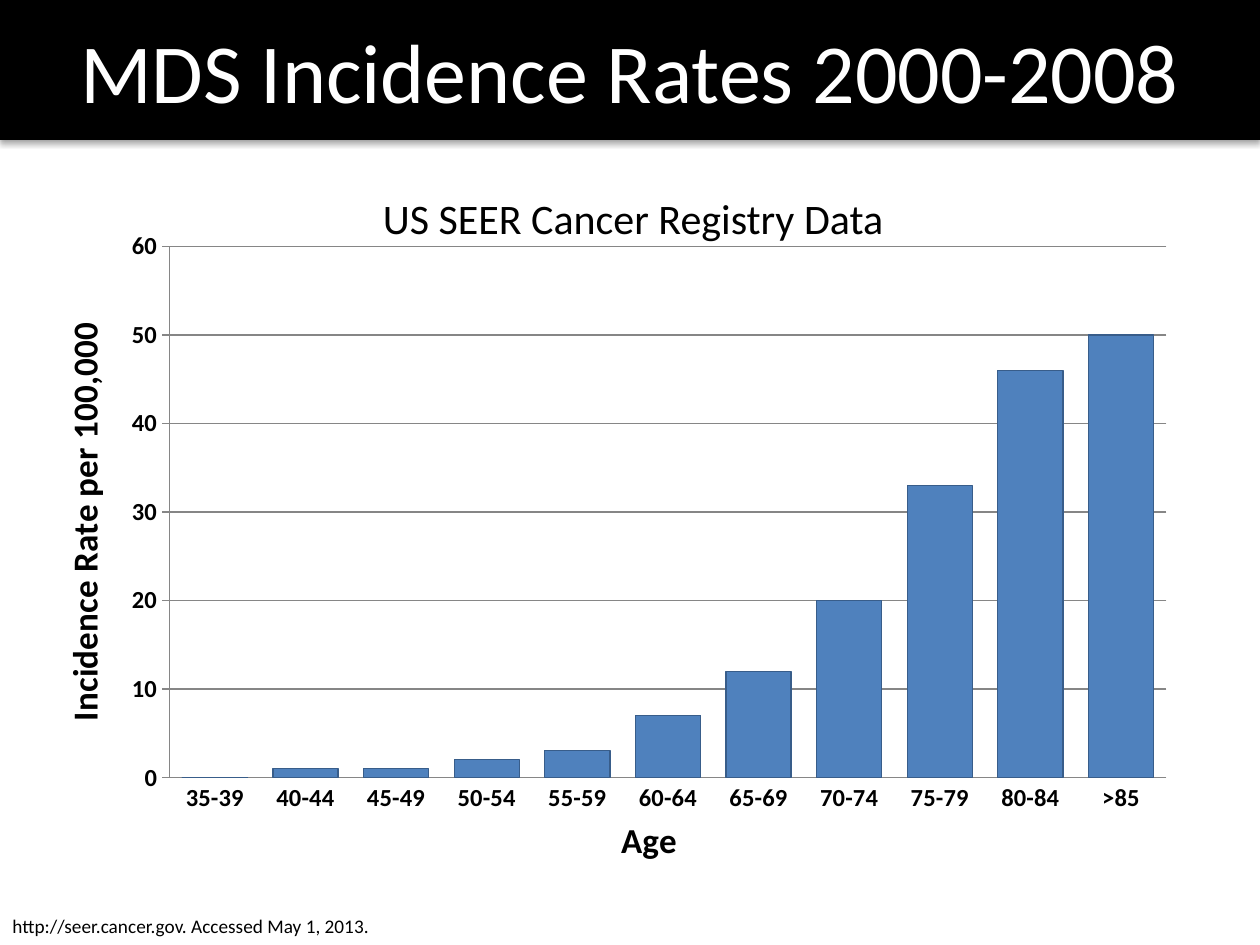
from lxml import etree
from pptx import Presentation
from pptx.chart.data import CategoryChartData
from pptx.dml.color import RGBColor
from pptx.enum.chart import XL_CHART_TYPE as CT, XL_TICK_MARK as TICK
from pptx.enum.shapes import MSO_SHAPE as SHAPE
from pptx.enum.text import MSO_ANCHOR as ANCHOR, MSO_AUTO_SIZE as FIT, PP_ALIGN as ALIGN
from pptx.oxml import parse_xml
from pptx.oxml.ns import qn
from pptx.util import Inches, Pt

BLACK = RGBColor(0, 0, 0)
WHITE = RGBColor(255, 255, 255)
BLUE = RGBColor(0x4F, 0x81, 0xBD)
NAVY = RGBColor(0x38, 0x5D, 0x8A)
GRAY = RGBColor(0x86, 0x86, 0x86)
FONT = "Calibri"
A_NS = "http://schemas.openxmlformats.org/drawingml/2006/main"

prs = Presentation()
prs.slide_width, prs.slide_height = Inches(10), Inches(7.5)
W, H = prs.slide_width, prs.slide_height
s = prs.slides.add_slide(prs.slide_layouts[6])


def style(font, size, color=BLACK, bold=False):
    font.name, font.size, font.bold = FONT, Pt(size), bold
    font.color.rgb = color


def add_label(text, left, top, width, height, size, wrap):
    tf = s.shapes.add_textbox(int(left * W), int(top * H), int(width * W), int(height * H)).text_frame
    tf.word_wrap = wrap
    tf.auto_size = FIT.SHAPE_TO_FIT_TEXT
    p = tf.paragraphs[0]
    p.text = text
    style(p.font, size)


# Incidence chart
ages = [f"{a}-{a + 4}" for a in range(35, 85, 5)] + [">85"]
data = CategoryChartData()
data.categories = ages
data.add_series("Series 1", [0, 1, 1, 2, 3, 7, 12, 20, 33, 46, 50])
chart = s.shapes.add_chart(CT.COLUMN_CLUSTERED, int(0.042 * W), int(0.236 * H),
                           int(0.899 * W), int(0.688 * H), data).chart
chart.has_legend = False
chart.has_title = False
style(chart.font, 10)

plot = chart.plots[0]
plot.gap_width = 39
plot.vary_by_categories = False
bars = plot.series[0].format
bars.fill.solid()
bars.fill.fore_color.rgb = BLUE
bars.line.color.rgb = NAVY
bars.line.width = Pt(0.75)

# Axes
cat_axis, val_axis = chart.category_axis, chart.value_axis
for axis, title, tick in ((cat_axis, "Age", TICK.NONE),
                          (val_axis, "Incidence Rate per 100,000", TICK.OUTSIDE)):
    p = axis.axis_title.text_frame.paragraphs[0]
    p.text = title
    style(p.font, 20, bold=True)
    style(axis.tick_labels.font, 14, bold=True)
    axis.major_tick_mark, axis.minor_tick_mark = tick, TICK.NONE
    axis.format.line.color.rgb = GRAY
val_axis.minimum_scale, val_axis.maximum_scale, val_axis.major_unit = 0, 60, 10
val_axis.has_major_gridlines = True
val_axis.major_gridlines.format.line.color.rgb = GRAY

# Fixed inner plot area
area = plot._element.getparent()
for old in area.findall(qn("c:layout")):
    area.remove(old)
layout = etree.Element(qn("c:layout"))
manual = etree.SubElement(layout, qn("c:manualLayout"))
for tag, val in (("layoutTarget", "inner"), ("xMode", "edge"), ("yMode", "edge"),
                 ("x", "0.103"), ("y", "0.036"), ("w", "0.88"), ("h", "0.817")):
    etree.SubElement(manual, qn(f"c:{tag}")).set("val", val)
area.insert(0, layout)

# Source line
add_label("http://seer.cancer.gov. Accessed May 1, 2013.", 0, 0.961, 0.5, 0.039, 11, True)

# Title band with soft shadow
sp = s.shapes.add_shape(SHAPE.RECTANGLE, 0, 0, W, int(0.148 * H))
sp.fill.solid()
sp.fill.fore_color.rgb = BLACK
sp.line.fill.background()
sp._element.spPr.append(parse_xml(
    f'<a:effectLst xmlns:a="{A_NS}"><a:outerShdw blurRad="{Pt(3.1)}" dist="{Pt(1.8)}" '
    'dir="5400000" rotWithShape="0"><a:srgbClr val="000000"><a:alpha val="35000"/>'
    '</a:srgbClr></a:outerShdw></a:effectLst>'))
tf = sp.text_frame
tf.word_wrap = True
tf.vertical_anchor = ANCHOR.MIDDLE
p = tf.paragraphs[0]
p.text = "MDS Incidence Rates 2000-2008"
p.alignment = ALIGN.CENTER
p.space_after = Pt(6)
style(p.font, 48, WHITE)

# Chart heading
add_label("US SEER Cancer Registry Data", 0.294, 0.197, 0.421, 0.067, 24, False)

prs.save("out.pptx")
